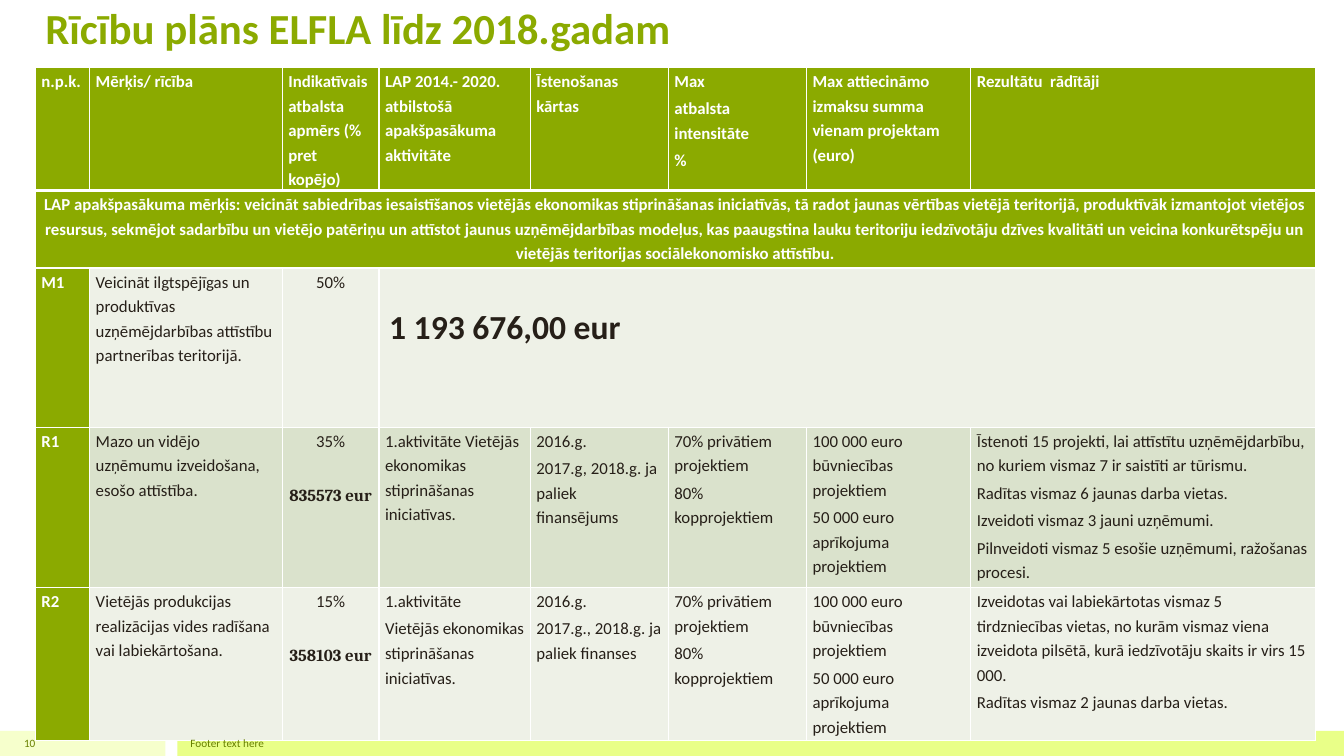
from dataclasses import dataclass

from lxml.etree import SubElement as Sub
from pptx import Presentation
from pptx.dml.color import RGBColor as Rgb
from pptx.enum.shapes import MSO_SHAPE as Shape
from pptx.enum.text import MSO_ANCHOR as Anchor, MSO_AUTO_SIZE as Auto, PP_ALIGN as Align
from pptx.oxml.ns import qn
from pptx.slide import Slide
from pptx.table import Table, _Cell as Cell
from pptx.util import Inches, Pt

HUES = {
    "green": "8BAA00", "white": "FFFFFF", "ink": "261F18",
    "pale": "EEF1E7", "sage": "DAE2CC", "olive": "688000",
    "mint": "F6FFCC", "lime": "E9FF88",
}
WIDTHS = [0.54, 1.91, 0.96, 1.5, 1.37, 1.37, 1.63, 3.42]
HEIGHTS = [1.19, 0.77, 1.58, 1.59, 1.52]


@dataclass
class Para:
    text: str
    size: float = 12
    bold: bool = False
    font: str = "Calibri"
    gap: float = 2


@dataclass
class Row:
    fill: str
    cells: list[list[Para]]


@dataclass
class Strip:
    left: float
    width: float
    fill: str


@dataclass
class Note:
    left: float
    width: float
    text: str
    align: Align


def plain(*lines: str) -> list[Para]:
    return [Para(line) for line in lines]


def share(part: str, sum_: str) -> list[Para]:
    """Percentage with the amount in euro set lower down."""
    return [Para(part), Para(sum_, bold=True, font="Cambria", gap=21.6)]


LIMITS = plain("100 000 euro būvniecības projektiem", "50 000 euro aprīkojuma projektiem")
RATES = plain("70% privātiem projektiem", "80% kopprojektiem")

ROWS = [
    Row("green", [
        plain("n.p.k."),
        plain("Mērķis/ rīcība"),
        plain("Indikatīvais atbalsta apmērs (% pret kopējo)"),
        plain("LAP 2014.- 2020. atbilstošā apakšpasākuma aktivitāte"),
        plain("Īstenošanas kārtas"),
        plain("Max", "atbalsta intensitāte", "%"),
        plain("Max attiecināmo izmaksu summa vienam projektam (euro)"),
        plain("Rezultātu  rādītāji"),
    ]),
    Row("green", [plain(
        "LAP apakšpasākuma mērķis: veicināt sabiedrības iesaistīšanos vietējās ekonomikas "
        "stiprināšanas iniciatīvās, tā radot jaunas vērtības vietējā teritorijā, produktīvāk "
        "izmantojot vietējos resursus, sekmējot sadarbību un vietējo patēriņu un attīstot jaunus "
        "uzņēmējdarbības modeļus, kas paaugstina lauku teritoriju iedzīvotāju dzīves kvalitāti un "
        "veicina konkurētspēju un vietējās teritorijas sociālekonomisko attīstību.")]),
    Row("pale", [
        plain("M1"),
        plain("Veicināt ilgtspējīgas un produktīvas uzņēmējdarbības attīstību partnerības teritorijā."),
        plain("50%"),
        [Para("1 193 676,00 eur", 24, True)],
    ]),
    Row("sage", [
        plain("R1"),
        plain("Mazo un vidējo uzņēmumu izveidošana, esošo attīstība."),
        share("35%", "835573 eur"),
        plain("1.aktivitāte Vietējās ekonomikas stiprināšanas iniciatīvas."),
        plain("2016.g.", "2017.g, 2018.g. ja paliek finansējums"),
        RATES,
        LIMITS,
        plain("Īstenoti 15 projekti, lai attīstītu uzņēmējdarbību, no kuriem vismaz 7 ir saistīti ar tūrismu.",
              "Radītas vismaz 6 jaunas darba vietas.",
              "Izveidoti vismaz 3 jauni uzņēmumi.",
              "Pilnveidoti vismaz 5 esošie uzņēmumi, ražošanas procesi."),
    ]),
    Row("pale", [
        plain("R2"),
        plain("Vietējās produkcijas realizācijas vides radīšana vai labiekārtošana."),
        share("15%", "358103 eur"),
        plain("1.aktivitāte", "Vietējās ekonomikas stiprināšanas iniciatīvas."),
        plain("2016.g.", "2017.g., 2018.g. ja paliek finanses"),
        RATES,
        LIMITS,
        plain("Izveidotas vai labiekārtotas vismaz 5 tirdzniecības vietas, no kurām vismaz viena "
              "izveidota pilsētā, kurā iedzīvotāju skaits ir virs 15 000.",
              "Radītas vismaz 2 jaunas darba vietas."),
    ]),
]
STRIPS = [Strip(0, 1.64, "mint"), Strip(1.76, 11.57, "lime")]
NOTES = [Note(1.79, 10, "Footer text here", Align.LEFT), Note(0, 0.45, "10", Align.RIGHT)]


def hue(name: str) -> Rgb:
    return Rgb.from_string(HUES[name])


def add_run(para, text: str, size: float, tint: str, bold: bool = False, face: str = "Calibri") -> None:
    run = para.add_run()
    run.text = text
    font = run.font
    font.size, font.bold, font.name = Pt(size), bold, face
    font.color.rgb = hue(tint)


def add_edges(cell: Cell, top: float, base: float) -> None:
    props = cell._tc.get_or_add_tcPr()
    for side, width in (("L", 1), ("R", 1), ("T", top), ("B", base)):
        line = Sub(props, qn(f"a:ln{side}"), w=str(Pt(width)))
        Sub(Sub(line, qn("a:solidFill")), qn("a:srgbClr"), val=HUES["white"])


def fill_cell(cell: Cell, paras: list[Para], tint: str, align: Align) -> None:
    frame = cell.text_frame
    for i, item in enumerate(paras):
        para = frame.paragraphs[0] if i == 0 else frame.add_paragraph()
        para.alignment, para.line_spacing, para.space_before = align, 1.2, Pt(item.gap)
        add_run(para, item.text, item.size, tint, item.bold or tint == "white", item.font)


def add_plan(slide: Slide) -> Table:
    shape = slide.shapes.add_table(len(ROWS), len(WIDTHS), Inches(0.35), Inches(0.67),
                                   Inches(sum(WIDTHS)), Inches(sum(HEIGHTS)))
    plan = shape.table
    plan.horz_banding = False
    for col, width in zip(plan.columns, WIDTHS):
        col.width = Inches(width)
    for r, (row, height) in enumerate(zip(ROWS, HEIGHTS)):
        plan.rows[r].height = Inches(height)
        for c in range(len(WIDTHS)):
            cell = plan.cell(r, c)
            add_edges(cell, 3 if r == 1 else 1, 3 if r == 0 else 1)
            fill = "green" if c == 0 else row.fill
            cell.fill.solid()
            cell.fill.fore_color.rgb = hue(fill)
            cell.margin_left = cell.margin_right = Inches(0.06)
            cell.margin_top = cell.margin_bottom = 0
            if c < len(row.cells):
                mid = r == 1 or (r > 1 and c == 2)
                fill_cell(cell, row.cells[c], "white" if fill == "green" else "ink",
                          Align.CENTER if mid else Align.LEFT)
        last = len(row.cells) - 1
        if last < len(WIDTHS) - 1:
            plan.cell(r, last).merge(plan.cell(r, len(WIDTHS) - 1))
    total = plan.cell(2, 3)
    total.margin_left, total.margin_top = Inches(0.1), Inches(0.31)
    return plan


def add_strip(slide: Slide, strip: Strip) -> None:
    bar = slide.shapes.add_shape(Shape.RECTANGLE, Inches(strip.left), Inches(7.25),
                                 Inches(strip.width), Inches(0.25))
    bar.shadow.inherit = False
    bar.fill.solid()
    bar.fill.fore_color.rgb = hue(strip.fill)
    bar.line.fill.background()


def add_note(slide: Slide, note: Note) -> None:
    box = slide.shapes.add_textbox(Inches(note.left), Inches(7.25), Inches(note.width), Inches(0.25))
    frame = box.text_frame
    frame.word_wrap, frame.vertical_anchor = True, Anchor.MIDDLE
    para = frame.paragraphs[0]
    para.alignment = note.align
    add_run(para, note.text, 8, "olive")


def set_title(slide: Slide) -> None:
    title = slide.shapes.title
    title.left, title.top = Inches(0.35), Inches(0.27)
    title.width, title.height = Inches(11.34), Inches(0.79)
    frame = title.text_frame
    frame.auto_size, frame.word_wrap = Auto.NONE, True
    frame.vertical_anchor, frame.margin_bottom = Anchor.BOTTOM, Inches(0.53)
    para = frame.paragraphs[0]
    para.alignment = Align.LEFT
    add_run(para, "Rīcību plāns ELFLA līdz 2018.gadam", 30.6, "green", True)


def main() -> None:
    deck = Presentation()
    deck.slide_width, deck.slide_height = Inches(13.33), Inches(7.5)
    slide = deck.slides.add_slide(deck.slide_layouts[5])
    for strip in STRIPS:
        add_strip(slide, strip)
    set_title(slide)
    add_plan(slide)
    for note in NOTES:
        add_note(slide, note)
    deck.save("out.pptx")


if __name__ == "__main__":
    main()
